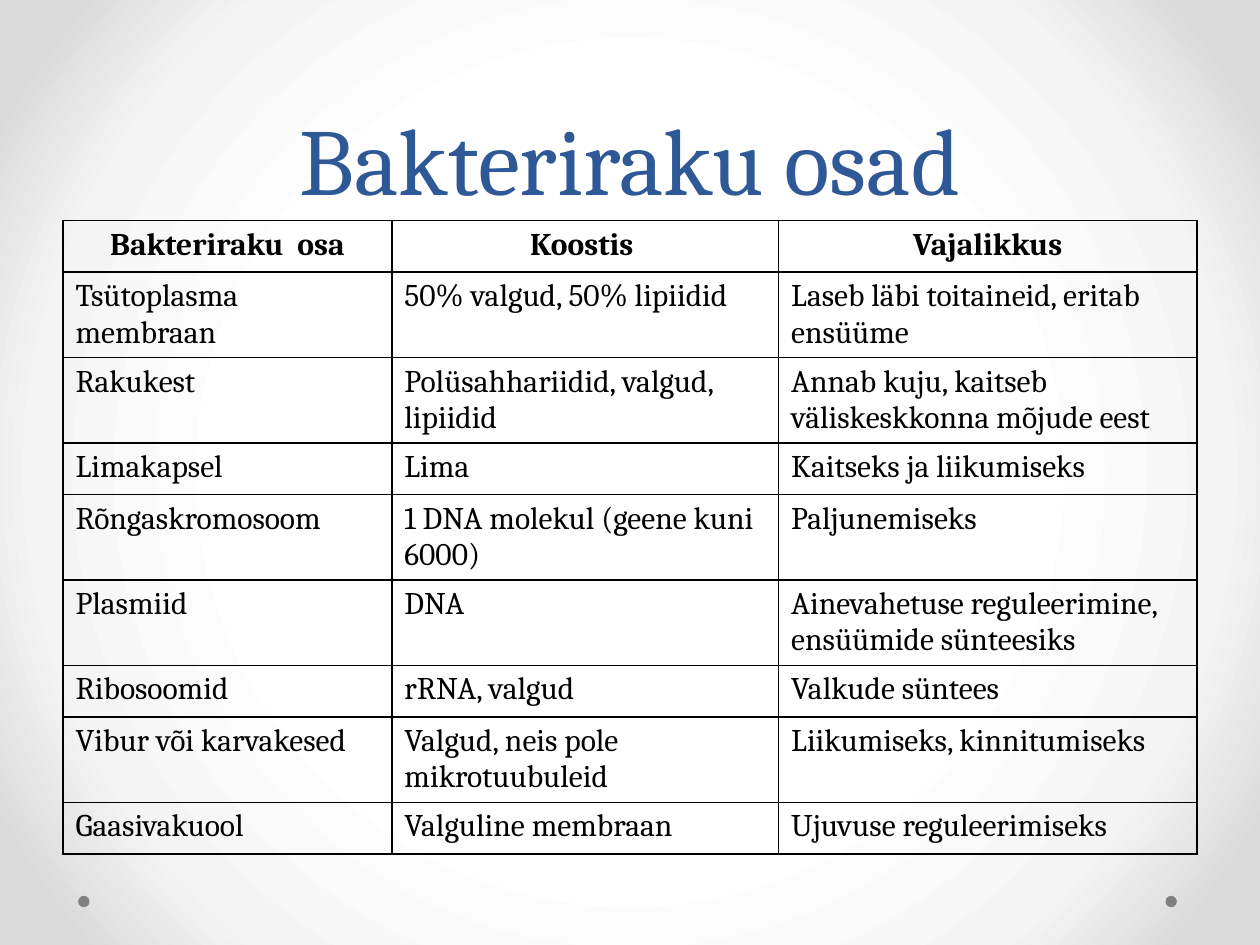
from dataclasses import dataclass

from lxml.etree import SubElement
from pptx import Presentation
from pptx.dml.color import RGBColor
from pptx.enum.shapes import MSO_SHAPE
from pptx.enum.text import MSO_ANCHOR, MSO_AUTO_SIZE, PP_ALIGN
from pptx.oxml.ns import qn
from pptx.util import Inches, Pt


@dataclass(frozen=True)
class Theme:
    font: str = "Cambria"
    title: str = "2F5897"
    ink: str = "000000"
    dot: str = "808080"
    glow: tuple = ((50, "FFFFFF"), (76, "F4F4F4"), (92, "DADADA"))
    title_size: int = 54
    title_line: int = 58
    cell_size: int = 18
    border: int = 1


theme = Theme()

ROWS = [
    ("Bakteriraku  osa", "Koostis ", "Vajalikkus"),
    ("Tsütoplasma membraan", "50% valgud, 50% lipiidid",
     "Laseb läbi toitaineid, eritab ensüüme"),
    ("Rakukest", "Polüsahhariidid, valgud, lipiidid",
     "Annab kuju, kaitseb väliskeskkonna mõjude eest"),
    ("Limakapsel", "Lima", "Kaitseks ja liikumiseks"),
    ("Rõngaskromosoom", "1 DNA molekul (geene kuni 6000)", "Paljunemiseks"),
    ("Plasmiid", "DNA", "Ainevahetuse reguleerimine, ensüümide sünteesiks"),
    ("Ribosoomid", "rRNA, valgud", "Valkude süntees"),
    ("Vibur või karvakesed", "Valgud, neis pole mikrotuubuleid",
     "Liikumiseks, kinnitumiseks"),
    ("Gaasivakuool", "Valguline membraan", "Ujuvuse reguleerimiseks"),
]
WIDTHS = (2.61, 3.07, 3.32)
ROW_H = 0.41


def add_run(para, text, size, color, bold=False):
    run = para.add_run()
    run.text = text
    run.font.name = theme.font
    run.font.size = Pt(size)
    run.font.bold = bold
    run.font.color.rgb = RGBColor.from_string(color)


def add_borders(cell):
    props = cell._tc.get_or_add_tcPr()
    for side in ("a:lnL", "a:lnR", "a:lnT", "a:lnB"):
        line = SubElement(props, qn(side), w=str(Pt(theme.border)))
        fill = SubElement(line, qn("a:solidFill"))
        SubElement(fill, qn("a:srgbClr"), val=theme.ink)


prs = Presentation()
prs.slide_width = Inches(10)
prs.slide_height = Inches(7.5)
slide = prs.slides.add_slide(prs.slide_layouts[5])

# Background: a round glow from the centre
slide.background.fill.gradient()
grad = slide.element.find(".//" + qn("a:gradFill"))
for child in list(grad):
    grad.remove(child)
stops = SubElement(grad, qn("a:gsLst"))
for pos, color in theme.glow:
    stop = SubElement(stops, qn("a:gs"), pos=str(pos * 1000))
    SubElement(stop, qn("a:srgbClr"), val=color)
circle = SubElement(grad, qn("a:path"), path="circle")
SubElement(circle, qn("a:fillToRect"), l="50000", t="50000", r="50000", b="50000")

# Corner dots
for left in (9.25, 0.62):
    dot = slide.shapes.add_shape(
        MSO_SHAPE.OVAL, Inches(left), Inches(7.11), Inches(0.09), Inches(0.09))
    dot.shadow.inherit = False
    dot.fill.solid()
    dot.fill.fore_color.rgb = RGBColor.from_string(theme.dot)
    dot.line.fill.background()

# Title
title = slide.shapes.title
title.left, title.top = Inches(0.5), Inches(0)
title.width, title.height = Inches(9), Inches(1.75)
frame = title.text_frame
frame.auto_size = MSO_AUTO_SIZE.NONE
frame.vertical_anchor = MSO_ANCHOR.BOTTOM
para = frame.paragraphs[0]
para.alignment = PP_ALIGN.CENTER
para.line_spacing = Pt(theme.title_line)
add_run(para, "Bakteriraku osad", theme.title_size, theme.title)

# Table of cell parts
table = slide.shapes.add_table(
    len(ROWS), len(WIDTHS), Inches(0.5), Inches(1.75),
    Inches(sum(WIDTHS)), Inches(ROW_H * len(ROWS))).table
table.first_row = True
table.horz_banding = False
for col, width in zip(table.columns, WIDTHS):
    col.width = Inches(width)
for r, texts in enumerate(ROWS):
    table.rows[r].height = Inches(ROW_H)
    head = r == 0
    for c, text in enumerate(texts):
        cell = table.cell(r, c)
        add_borders(cell)
        cell.fill.background()
        para = cell.text_frame.paragraphs[0]
        para.alignment = PP_ALIGN.CENTER if head else PP_ALIGN.LEFT
        add_run(para, text, theme.cell_size, theme.ink, bold=head)

prs.save("out.pptx")
